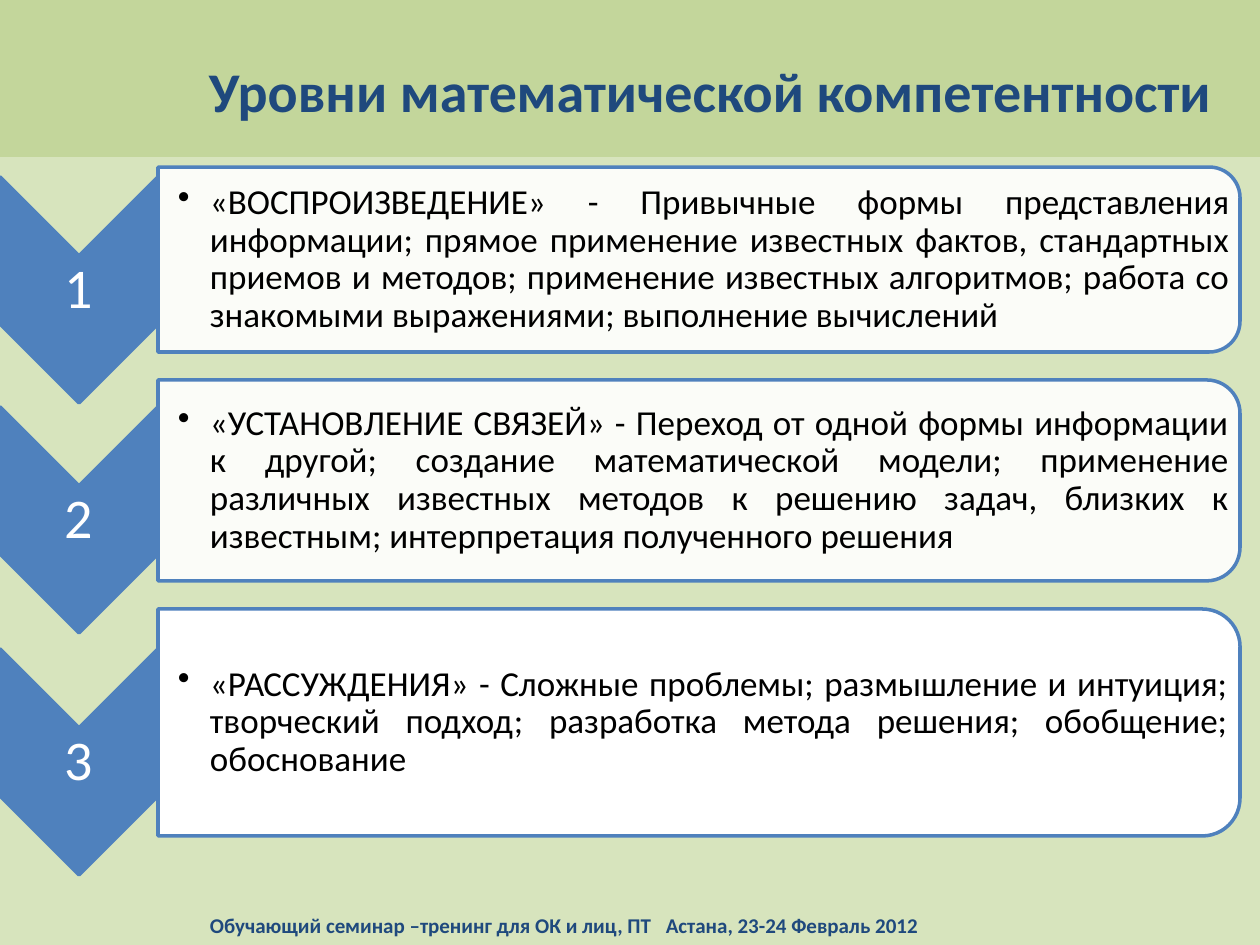
from dataclasses import dataclass

from lxml import etree
from pptx import Presentation
from pptx import util as u
from pptx.dml.color import RGBColor
from pptx.enum import shapes, text
from pptx.oxml.ns import qn

SCALE = 914400 / 126


@dataclass(frozen=True)
class Theme:
    font: str = "Calibri"
    header: str = "C3D69B"
    body: str = "D7E4BD"
    accent: str = "4F81BD"
    heading: str = "1F497D"
    light: str = "FFFFFF"
    ink: str = "000000"
    title_size: int = 32
    level_size: int = 20
    footer_size: int = 12
    border: int = 2


THEME = Theme()

LEVELS = [
    (167, 185, 290, 90,
     "«ВОСПРОИЗВЕДЕНИЕ» - Привычные формы представления информации; прямое "
     "применение известных фактов, стандартных приемов и методов; применение "
     "известных алгоритмов; работа со знакомыми выражениями; выполнение вычислений"),
    (380, 201, 520, 90,
     "«УСТАНОВЛЕНИЕ СВЯЗЕЙ» - Переход от одной формы информации к другой; "
     "создание математической модели; применение различных известных методов к "
     "решению задач, близких к известным; интерпретация полученного решения"),
    (609, 227, 762, 100,
     "«РАССУЖДЕНИЯ» - Сложные проблемы; размышление и интуиция; творческий "
     "подход; разработка метода решения; обобщение; обоснование"),
]


def px(length):
    return u.Emu(round(length * SCALE))


def add_child(parent, tag, **attributes):
    return etree.SubElement(parent, qn(tag), attributes)


def add_block(slide, preset, box, fill, border=None, opacity=100, rotation=0):
    block = slide.shapes.add_shape(preset, *map(px, box))
    block.shadow.inherit = False
    block.rotation = rotation
    block.fill.solid()
    block.fill.fore_color.rgb = RGBColor.from_string(fill)
    if opacity < 100:
        color = block.fill._xPr.find(".//" + qn("a:srgbClr"))
        add_child(color, "a:alpha", val=str(opacity * 1000))
    if border:
        block.line.color.rgb = RGBColor.from_string(border)
        block.line.width = u.Pt(THEME.border)
    else:
        block.line.fill.background()
    return block


def add_upright(slide, preset, box, **style):
    left, top, width, height = box
    turned = (left + (width - height) / 2, top + (height - width) / 2, height, width)
    return add_block(slide, preset, turned, rotation=90, **style)


def add_text(slide, box, wording, insets):
    frame = slide.shapes.add_textbox(*map(px, box)).text_frame
    frame.word_wrap = True
    frame.vertical_anchor = text.MSO_ANCHOR.MIDDLE
    (frame.margin_left, frame.margin_top,
     frame.margin_right, frame.margin_bottom) = map(px, insets)
    frame.text = wording
    return frame.paragraphs[0]


def format_runs(paragraph, size, color, bold=False):
    for run in paragraph.runs:
        run.font.name = THEME.font
        run.font.size = u.Pt(size)
        run.font.bold = bold
        run.font.color.rgb = RGBColor.from_string(color)


def add_title(slide, box):
    title = add_text(slide, box, "Уровни математической компетентности", (23, 6, 13, 6))
    format_runs(title, THEME.title_size, THEME.heading, bold=True)


def add_marker(slide, box, number):
    left, top, width, height = box
    add_upright(slide, shapes.MSO_SHAPE.CHEVRON, box,
                fill=THEME.accent, border=THEME.accent)
    label_height = 68
    label_box = (left, top + (height - label_height) / 2, width, label_height)
    label = add_text(slide, label_box, str(number), (3, 3, 3, 3))
    label.alignment = text.PP_ALIGN.CENTER
    label.line_spacing = 0.9
    format_runs(label, THEME.title_size, THEME.light)


def add_description(slide, box, wording, opacity):
    left, top, width, height = box
    add_upright(slide, shapes.MSO_SHAPE.ROUND_2_SAME_RECTANGLE, box,
                fill=THEME.light, border=THEME.accent, opacity=opacity)
    corner = round(height * 0.05)
    text_box = (left, top + corner, width - corner, height - 2 * corner)
    description = add_text(slide, text_box, wording, (20, 1, 1, 1))
    properties = description._p.get_or_add_pPr()
    properties.set("marL", str(px(32)))
    properties.set("indent", str(px(-32)))
    add_child(properties, "a:buChar", char="•")
    description.alignment = text.PP_ALIGN.JUSTIFY
    description.line_spacing = 0.9
    format_runs(description, THEME.level_size, THEME.ink)


def add_levels(slide, box):
    left, top, width, height = box
    marker_width, marker_height = 158, 226
    for number, (offset, panel_height, center, opacity, wording) in enumerate(LEVELS, 1):
        marker_top = top + center - marker_height / 2
        add_marker(slide, (left, marker_top, marker_width, marker_height), number)
        panel = (left + marker_width, top + offset, width - marker_width, panel_height)
        add_description(slide, panel, wording, opacity)


def add_footer(slide, box):
    footer = add_text(
        slide, box,
        "Обучающий семинар –тренинг для ОК и лиц, ПТ\tАстана, 23-24 Февраль 2012",
        (13, 6, 13, 6))
    tabs = add_child(footer._p.get_or_add_pPr(), "a:tabLst")
    add_child(tabs, "a:tab", pos=str(px(456)), algn="l")
    format_runs(footer, THEME.footer_size, THEME.heading, bold=True)


def main():
    deck = Presentation()
    deck.slide_width, deck.slide_height = px(1260), px(945)
    slide = deck.slides.add_slide(deck.slide_layouts[6])
    slide.background.fill.solid()
    slide.background.fill.fore_color.rgb = RGBColor.from_string(THEME.header)
    add_title(slide, (186, 16, 1074, 149))
    add_block(slide, shapes.MSO_SHAPE.RECTANGLE, (0, 157, 1260, 788), THEME.body)
    add_levels(slide, (0, 0, 1240, 945))
    add_footer(slide, (197, 905, 837, 40))
    deck.save("out.pptx")


if __name__ == "__main__":
    main()
